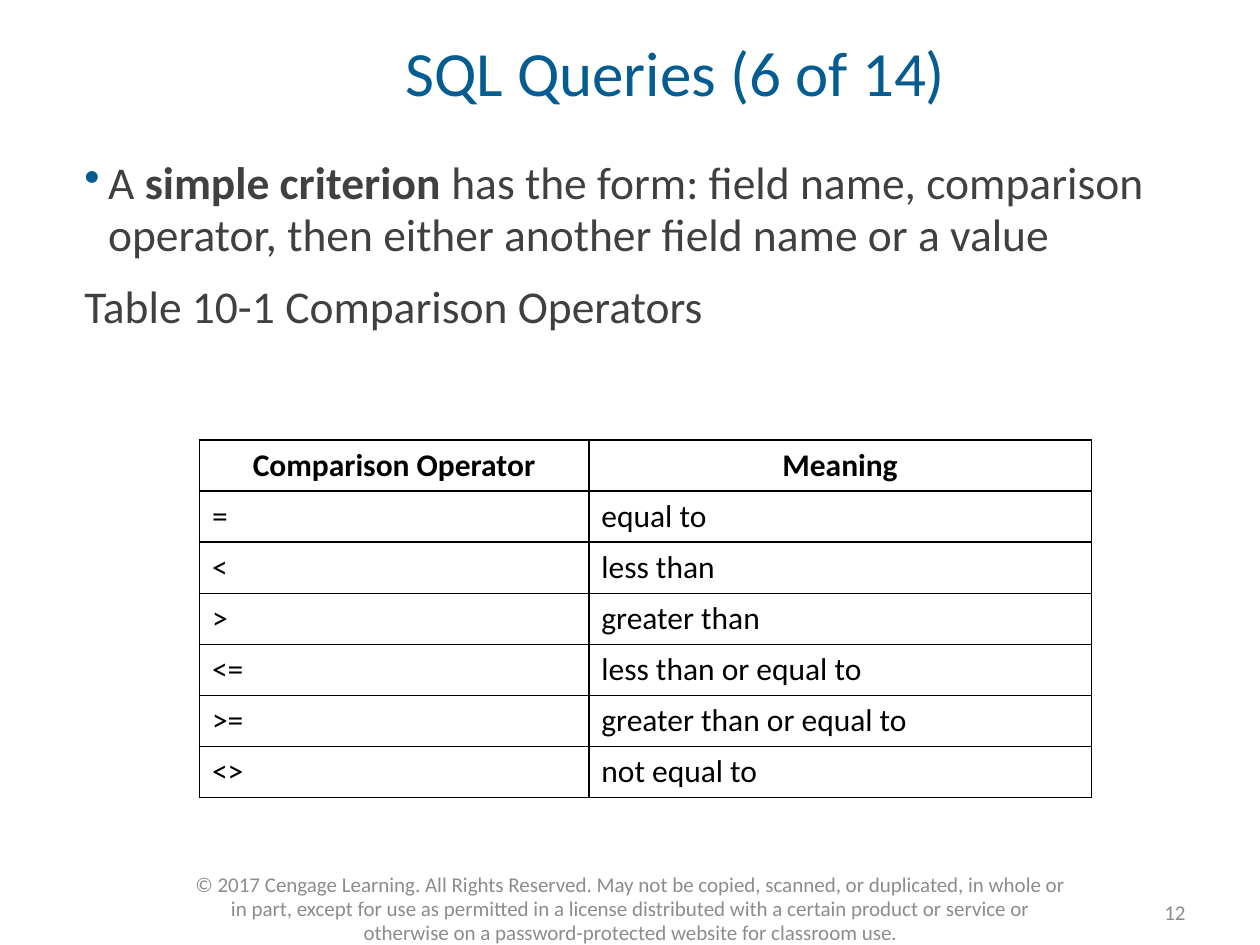
"""Build the slide on SQL comparison operators."""
from lxml.etree import SubElement
from pptx import Presentation
from pptx.dml.color import RGBColor
from pptx.enum.text import MSO_ANCHOR, PP_ALIGN
from pptx.oxml.ns import qn
from pptx.util import Cm, Pt

FONT = "Calibri"
BLUE, DARK, GREY, BLACK = "055C91", "404040", "8C8C8C", "000000"

TITLE = "SQL Queries (6 of 14)"
CRITERION = [
    ("A ", False),
    ("simple criterion ", True),
    ("has the form: field name, comparison operator, "
     "then either another field name or a value", False),
]
CAPTION = "Table 10-1 Comparison Operators"
OPERATORS = [
    ("Comparison Operator", "Meaning"),
    ("=", "equal to"),
    ("<", "less than"),
    (">", "greater than"),
    ("<=", "less than or equal to"),
    (">=", "greater than or equal to"),
    ("<>", "not equal to"),
]
COPYRIGHT = (
    "© 2017 Cengage Learning. All Rights Reserved. May not be copied, scanned, "
    "or duplicated, in whole or in part, except for use as permitted in a license "
    "distributed with a certain product or service or otherwise on a "
    "password-protected website for classroom use."
)
PAGE_NUMBER = "12"
COLUMN_WIDTHS = (7.85, 10.13)
ROW_HEIGHT = 1.03


def rgb(color):
    """Turn a hex string into a colour."""
    return RGBColor.from_string(color)


def format_paragraph(para, size, color, align=PP_ALIGN.LEFT, spacing=None):
    """Style a paragraph and all of its runs."""
    para.alignment = align
    para.line_spacing = spacing
    for span in para.runs:
        span.font.name = FONT
        span.font.size = Pt(size)
        span.font.color.rgb = rgb(color)


def add_box(page, left, top, width, height, inset=True, anchor=MSO_ANCHOR.TOP):
    """Add a wrapping text box and return its text frame."""
    box = page.shapes.add_textbox(Cm(left), Cm(top), Cm(width), Cm(height))
    frame = box.text_frame
    frame.word_wrap = True
    frame.vertical_anchor = anchor
    if not inset:
        frame.margin_left = frame.margin_right = Cm(0)
        frame.margin_top = frame.margin_bottom = Cm(0)
    return frame


def add_bullet(para, indent, color):
    """Give a paragraph a coloured round bullet with a hanging indent."""
    properties = para._p.get_or_add_pPr()
    properties.set("marL", str(Cm(indent)))
    properties.set("indent", str(-Cm(indent)))
    bullet_color = SubElement(properties, qn("a:buClr"))
    SubElement(bullet_color, qn("a:srgbClr"), val=color)
    SubElement(properties, qn("a:buChar"), char="•")


def add_borders(cell, color):
    """Draw a one-point line on every side of a cell."""
    properties = cell._tc.get_or_add_tcPr()
    for side in ("lnL", "lnR", "lnT", "lnB"):
        line = SubElement(properties, qn(f"a:{side}"), w=str(Pt(1)))
        fill = SubElement(line, qn("a:solidFill"))
        SubElement(fill, qn("a:srgbClr"), val=color)


def add_body(page):
    """Add the bulleted definition and the table caption."""
    frame = add_box(page, 1.7, 3.18, 22.76, 4.65, inset=False)
    definition = frame.paragraphs[0]
    add_bullet(definition, 0.48, BLUE)
    for text, bold in CRITERION:
        span = definition.add_run()
        span.text = text
        span.font.bold = bold
    caption = frame.add_paragraph()
    caption.text = CAPTION
    caption.space_before = Pt(12)
    for para in frame.paragraphs:
        format_paragraph(para, 26, DARK, spacing=0.95)


def add_operator_table(page):
    """Add the bordered table of comparison operators."""
    rows = len(OPERATORS)
    table = page.shapes.add_table(
        rows, len(COLUMN_WIDTHS), Cm(4.02), Cm(8.87),
        Cm(sum(COLUMN_WIDTHS)), Cm(rows * ROW_HEIGHT),
    ).table
    table.horz_banding = False
    for column, width in zip(table.columns, COLUMN_WIDTHS):
        column.width = Cm(width)
    for index, texts in enumerate(OPERATORS):
        header = index == 0
        table.rows[index].height = Cm(ROW_HEIGHT)
        for cell, text in zip(table.rows[index].cells, texts):
            add_borders(cell, BLACK)
            cell.fill.background()
            para = cell.text_frame.paragraphs[0]
            para.text = text
            align = PP_ALIGN.CENTER if header else PP_ALIGN.LEFT
            format_paragraph(para, 18, BLACK, align)
            para.runs[0].font.bold = header


def main():
    """Assemble and save the deck."""
    deck = Presentation()
    deck.slide_width, deck.slide_height = Cm(25.4), Cm(19.05)
    page = deck.slides.add_slide(deck.slide_layouts[6])

    number = add_box(page, 23.11, 18.01, 1.04, 0.76, anchor=MSO_ANCHOR.MIDDLE)
    number.text = PAGE_NUMBER
    format_paragraph(number.paragraphs[0], 12, GREY, PP_ALIGN.RIGHT)

    footer = add_box(page, 3.61, 17.48, 18.21, 1.52)
    footer.text = COPYRIGHT
    format_paragraph(footer.paragraphs[0], 12, GREY, PP_ALIGN.CENTER, 0.95)

    title = add_box(page, 2.11, 0.38, 23.01, 2.36, False, MSO_ANCHOR.MIDDLE)
    title.text = TITLE
    format_paragraph(title.paragraphs[0], 36, BLUE, PP_ALIGN.CENTER, 0.85)

    add_body(page)
    add_operator_table(page)
    deck.save("out.pptx")


if __name__ == "__main__":
    main()
